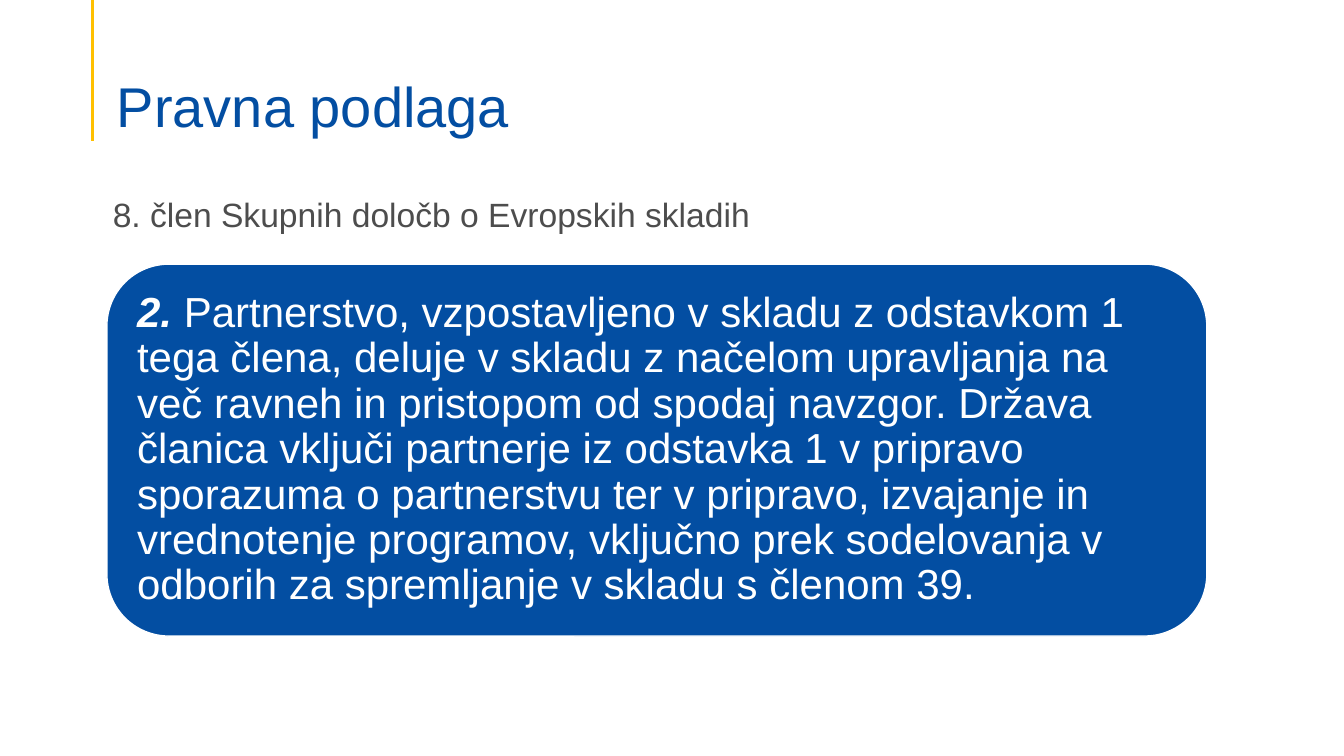
from pptx import Presentation
from pptx.dml.color import RGBColor
from pptx.enum.shapes import MSO_CONNECTOR, MSO_SHAPE
from pptx.enum.text import MSO_ANCHOR, PP_ALIGN
from pptx.oxml.ns import qn
from pptx.util import Inches, Pt
from lxml.etree import SubElement

BLUE, GOLD, GREY, WHITE = "034EA2", "FFC000", "4D4D4D", "FFFFFF"


def color(code):
    return RGBColor.from_string(code)


def write(para, text, size, code, bold=False, slant=False):
    run = para.add_run()
    run.text = text
    look = {"name": "Arial", "size": Pt(size), "bold": bold, "italic": slant}
    for key, value in look.items():
        setattr(run.font, key, value)
    run.font.color.rgb = color(code)


deck = Presentation()
deck.slide_width, deck.slide_height = Inches(13.33), Inches(7.5)
slide = deck.slides.add_slide(deck.slide_layouts[5])
shapes = slide.shapes

# Gold rule beside the title
rule = shapes.add_connector(MSO_CONNECTOR.STRAIGHT, Inches(0.92), Inches(0),
                            Inches(0.92), Inches(1.4))
rule.line.color.rgb = color(GOLD)
rule.line.width = Pt(2.25)
SubElement(rule.element.spPr, qn("a:effectLst"))

# Title, subtitle and rounded panel
title = shapes.title
intro = shapes.add_textbox(0, 0, 0, 0)
panel = shapes.add_shape(MSO_SHAPE.ROUNDED_RECTANGLE, 0, 0, 0, 0)
panel.shadow.inherit = False
panel.fill.solid()
panel.fill.fore_color.rgb = color(BLUE)
panel.line.color.rgb = color(WHITE)
panel.line.width = Pt(1)

# Place, anchor, insets and line spacing of each
plan = [
    (title, (1.06, 0.53, 11.5, 0.86), MSO_ANCHOR.BOTTOM, (0.1, 0.05, 0.1, 0), 0.9),
    (intro, (1.02, 1.87, 10.75, 0.5), MSO_ANCHOR.TOP, (0.1, 0.05, 0.1, 0.05), 1),
    (panel, (1.06, 2.62, 10.91, 3.69), MSO_ANCHOR.MIDDLE, (0.12,) * 4, 0.9),
]
for shape, place, anchor, insets, lead in plan:
    for key, value in zip(("left", "top", "width", "height"), place):
        setattr(shape, key, Inches(value))
    frame = shape.text_frame
    frame.word_wrap = True
    frame.vertical_anchor = anchor
    for side, value in zip(("left", "top", "right", "bottom"), insets):
        setattr(frame, "margin_" + side, Inches(value))
    frame.paragraphs[0].alignment = PP_ALIGN.LEFT
    frame.paragraphs[0].line_spacing = lead

# Wording
write(title.text_frame.paragraphs[0], "Pravna podlaga", 40, BLUE)
write(intro.text_frame.paragraphs[0],
      "8. člen Skupnih določb o Evropskih skladih", 24, GREY)
clause = panel.text_frame.paragraphs[0]
write(clause, "2. ", 30, WHITE, True, True)
write(clause,
      "Partnerstvo, vzpostavljeno v skladu z odstavkom 1 tega člena, "
      "deluje v skladu z načelom upravljanja na več ravneh in pristopom "
      "od spodaj navzgor. Država članica vključi partnerje iz odstavka 1 "
      "v pripravo sporazuma o partnerstvu ter v pripravo, izvajanje in "
      "vrednotenje programov, vključno prek sodelovanja v odborih za "
      "spremljanje v skladu s členom 39.", 30, WHITE)

deck.save("out.pptx")
